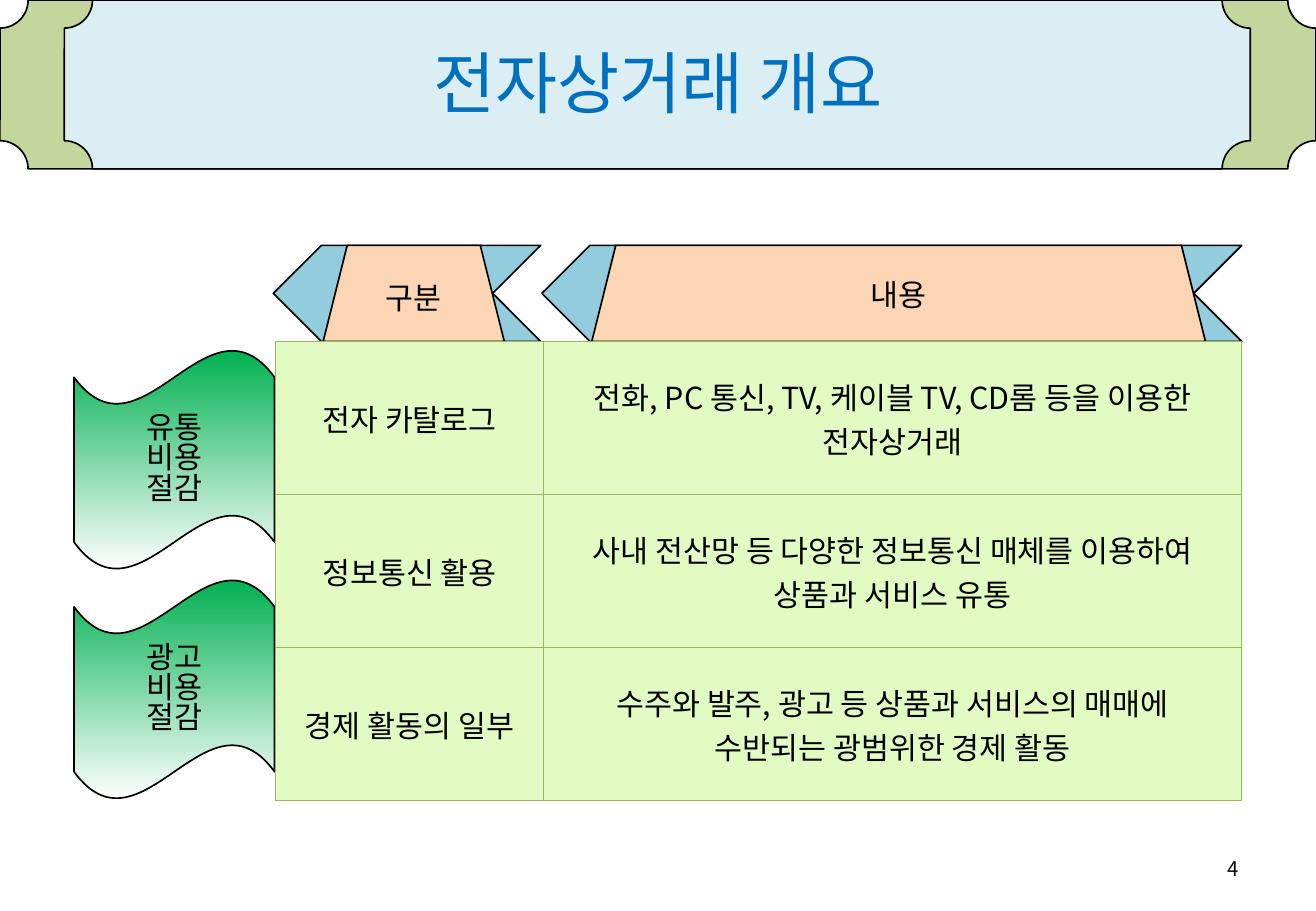
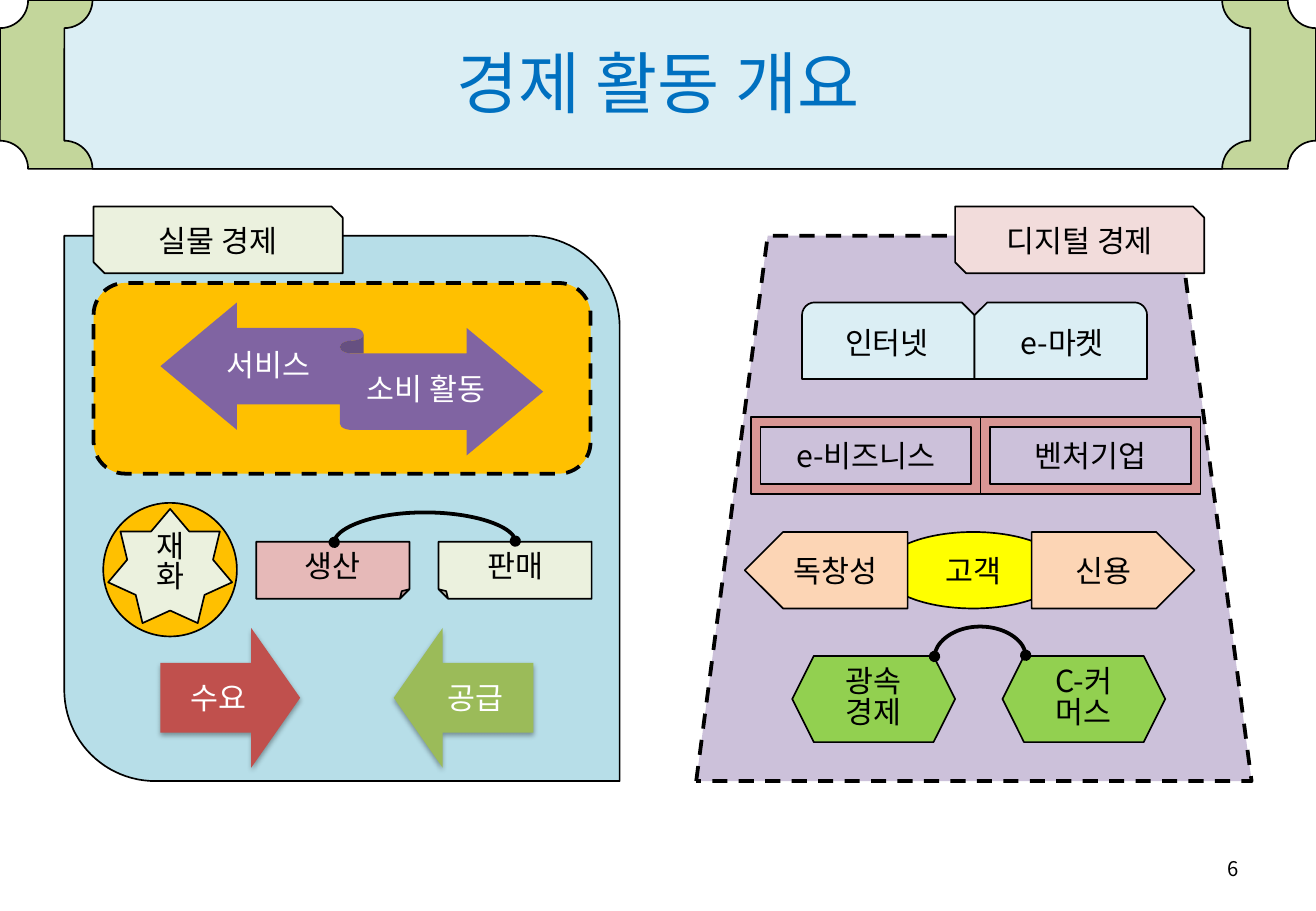
from dataclasses import dataclass

from lxml.etree import SubElement
from pptx import Presentation
from pptx.dml.color import RGBColor
from pptx.enum.dml import MSO_LINE
from pptx.enum.shapes import MSO_CONNECTOR, MSO_SHAPE
from pptx.enum.text import MSO_ANCHOR, PP_ALIGN
from pptx.oxml.ns import qn
from pptx.util import Inches, Pt


@dataclass(frozen=True)
class Theme:
    font: str = "Noto Sans CJK KR"
    title_size: int = 40
    body_size: int = 18
    number_size: int = 12
    thin: float = 1
    thick: float = 2.25
    black: str = "000000"
    white: str = "FFFFFF"
    title: str = "0070C0"
    band_ends: str = "C3D69B"
    band: str = "DBEEF4"
    ribbon: str = "93CDDD"
    peach: str = "FCD5B5"
    wave: str = "00B050"
    cell: str = "E2FBC3"
    border: str = "98B955"
    real_panel: str = "B7DEE8"
    digital_panel: str = "CCC1DA"
    ivory: str = "EBF1DE"
    blush: str = "F2DCDB"
    pink: str = "E6B9B8"
    rose: str = "D99694"
    orange: str = "FFC000"
    purple: str = "8064A2"
    red: str = "C0504D"
    olive: str = "9BBB59"
    yellow: str = "FFFF00"
    lime: str = "92D050"


T = Theme()


def rgb(value):
    return RGBColor.from_string(value)


def inches(at):
    return [Inches(v) for v in at]


# Text
def write(tf, text, size=T.body_size, color=T.black, align=PP_ALIGN.CENTER, spacing=None):
    for i, line in enumerate(text.split("\n")):
        p = tf.paragraphs[0] if i == 0 else tf.add_paragraph()
        p.text = line
        p.alignment = align
        if spacing:
            p.line_spacing = spacing
        p.font.size = Pt(size)
        p.font.name = T.font
        p.font.color.rgb = rgb(color)
        SubElement(p._p.pPr.find(qn("a:defRPr")), qn("a:ea"), typeface=T.font)


def set_insets(tf, x, y):
    tf.margin_left = tf.margin_right = Inches(x)
    tf.margin_top = tf.margin_bottom = Inches(y)


def add_text(shapes, at, text, insets=(0.1, 0.05), **style):
    tf = shapes.add_textbox(*inches(at)).text_frame
    tf.word_wrap = True
    tf.vertical_anchor = MSO_ANCHOR.MIDDLE
    set_insets(tf, *insets)
    write(tf, text, **style)


# Shapes
def add_shape(shapes, kind, at, fill, text="", line=T.thin, dash=False, flip=False, color=T.black):
    sp = shapes.add_shape(kind, *inches(at))
    sp.shadow.inherit = False
    sp.fill.solid()
    sp.fill.fore_color.rgb = rgb(fill)
    if line:
        sp.line.color.rgb = rgb(T.black)
        sp.line.width = Pt(line)
    else:
        sp.line.fill.background()
    if dash:
        sp.line.dash_style = MSO_LINE.DASH
    if flip:
        sp.element.spPr.find(qn("a:xfrm")).set("flipH", "1")
    if text:
        tf = sp.text_frame
        tf.word_wrap = False
        tf.vertical_anchor = MSO_ANCHOR.MIDDLE
        write(tf, text, color=color, spacing=0.83 if "\n" in text else None)
    return sp


def add_wave(shapes, at, text):
    sp = add_shape(shapes, MSO_SHAPE.WAVE, at, T.wave, text, flip=True)
    sp.fill.gradient()
    sp.fill.gradient_angle = 270
    for stop, position, color in zip(sp.fill.gradient_stops, (0, 1), (T.wave, T.white)):
        stop.position = position
        stop.color.rgb = rgb(color)


def add_ribbon_header(shapes, left, width, text):
    top, height = 2.02, 0.79
    add_shape(shapes, MSO_SHAPE.CHEVRON, (left, top, width, height), T.ribbon, flip=True)
    add_shape(shapes, MSO_SHAPE.TRAPEZOID, (left + 0.41, top, width - 0.71, height), T.peach, text)


def add_shadowed_arrow(shapes, kind, left, fill, text):
    sp = add_shape(shapes, kind, (left, 5.17, 1.15, 1.15), fill, text, line=0, color=T.white)
    sp.adjustments[0], sp.adjustments[1] = 0.5, 0.35
    set_insets(sp.text_frame, 0.14, 0.14)
    effects = sp.element.spPr.find(qn("a:effectLst"))
    shadow = SubElement(effects, qn("a:outerShdw"), blurRad=str(Pt(3.1)), dist=str(Pt(1.8)),
                        dir="5400000", rotWithShape="0")
    black = SubElement(shadow, qn("a:srgbClr"), val=T.black)
    SubElement(black, qn("a:alpha"), val="35000")


def add_arc(shapes, x1, x2, y):
    """Curve bulging 0.25 upwards: a vertical connector turned by 90 degrees."""
    drop, rise = 0.01, 0.25
    mid, half = (x1 + x2) / 2, (x2 - x1) / 2
    ends = (mid + drop / 2, y + half, mid - drop / 2, y - half)
    cn = shapes.add_connector(MSO_CONNECTOR.CURVE, *inches(ends))
    cn.line.color.rgb = rgb(T.black)
    cn.line.width = Pt(T.thick)
    sp_pr = cn.element.spPr
    sp_pr.find(qn("a:xfrm")).set("rot", "5400000")
    guides = sp_pr.find(qn("a:prstGeom")).find(qn("a:avLst"))
    SubElement(guides, qn("a:gd"), name="adj1", fmla=f"val {round(rise / drop * 100000)}")
    ln = sp_pr.find(qn("a:ln"))
    for tag in ("a:headEnd", "a:tailEnd"):
        SubElement(ln, qn(tag), type="oval")
    SubElement(sp_pr, qn("a:effectLst"))


# Table
def fill_cell(cell, text):
    tc_pr = cell._tc.get_or_add_tcPr()
    for side in "LRTB":
        ln = SubElement(tc_pr, qn(f"a:ln{side}"), w=str(Pt(0.75)))
        SubElement(SubElement(ln, qn("a:solidFill")), qn("a:srgbClr"), val=T.border)
    cell.fill.solid()
    cell.fill.fore_color.rgb = rgb(T.cell)
    cell.vertical_anchor = MSO_ANCHOR.MIDDLE
    write(cell.text_frame, text)


def add_grid(shapes, at, widths, rows):
    table = shapes.add_table(len(rows), len(widths), *inches(at)).table
    table.first_row = table.horz_banding = False
    for column, width in zip(table.columns, widths):
        column.width = Inches(width)
    for r, texts in enumerate(rows):
        for c, text in enumerate(texts):
            fill_cell(table.cell(r, c), text)


# Shared frame: band, title, page number
def add_slide(prs, title, number):
    shapes = prs.slides.add_slide(prs.slide_layouts[6]).shapes
    add_shape(shapes, MSO_SHAPE.PLAQUE, (0, 0, 10.83, 1.39), T.band_ends)
    add_shape(shapes, MSO_SHAPE.PLAQUE, (0.53, 0, 9.76, 1.39), T.band)
    add_text(shapes, (0.54, 0.05, 9.75, 1.25), title, size=T.title_size, color=T.title)
    add_text(shapes, (7.76, 6.95, 2.53, 0.4), number, size=T.number_size, align=PP_ALIGN.RIGHT)
    return shapes


def build_commerce(prs):
    shapes = add_slide(prs, "전자상거래 개요", "4")
    add_ribbon_header(shapes, 2.25, 2.2, "구분")
    add_ribbon_header(shapes, 4.46, 5.76, "내용")
    for i, word in enumerate(("유통", "광고")):
        add_wave(shapes, (0.61, 2.88 + 1.89 * i, 1.65, 1.81), f"{word}\n비용\n절감")
    add_grid(shapes, (2.27, 2.81, 7.95, 3.78), (2.2, 5.75), [
        ("전자 카탈로그", "전화, PC 통신, TV, 케이블 TV, CD롬 등을 이용한 전자상거래"),
        ("정보통신 활용", "사내 전산망 등 다양한 정보통신 매체를 이용하여 상품과 서비스 유통"),
        ("경제 활동의 일부", "수주와 발주, 광고 등 상품과 서비스의 매매에\n수반되는 광범위한 경제 활동"),
    ])


def add_real_economy(shapes):
    add_shape(shapes, MSO_SHAPE.ROUND_2_DIAG_RECTANGLE, (0.53, 1.94, 4.57, 4.49),
              T.real_panel, flip=True)
    add_shape(shapes, MSO_SHAPE.SNIP_2_DIAG_RECTANGLE, (0.77, 1.7, 2.05, 0.55), T.ivory, "실물 경제")
    # Service and consumption
    add_shape(shapes, MSO_SHAPE.ROUNDED_RECTANGLE, (0.77, 2.33, 4.09, 1.57), T.orange,
              line=T.thick, dash=True)
    add_shape(shapes, MSO_SHAPE.LEFT_RIGHT_RIBBON, (1.32, 2.49, 3.15, 1.26), T.purple, line=0)
    for at, text in (((1.69, 2.71, 1.04, 0.62), "서비스"), ((2.89, 2.91, 1.23, 0.62), "소비 활동")):
        add_text(shapes, at, text, insets=(0, 0.07), color=T.white, spacing=0.9)
    # Demand and supply
    add_shadowed_arrow(shapes, MSO_SHAPE.RIGHT_ARROW, 1.32, T.red, "수요")
    add_shadowed_arrow(shapes, MSO_SHAPE.LEFT_ARROW, 3.24, T.olive, "공급")
    # Goods, production and sales
    add_shape(shapes, MSO_SHAPE.OVAL, (0.85, 4.14, 1.1, 1.1), T.orange)
    add_shape(shapes, MSO_SHAPE.STAR_7_POINT, (0.89, 4.19, 1.02, 0.94), T.ivory, "재\n화")
    add_shape(shapes, MSO_SHAPE.FOLDED_CORNER, (2.11, 4.46, 1.26, 0.47), T.pink, "생산")
    add_shape(shapes, MSO_SHAPE.FOLDED_CORNER, (3.61, 4.46, 1.26, 0.47), T.ivory, "판매", flip=True)
    add_arc(shapes, 2.75, 4.24, 4.46)


def add_digital_economy(shapes):
    panel = add_shape(shapes, MSO_SHAPE.TRAPEZOID, (5.73, 1.94, 4.57, 4.49), T.digital_panel,
                      line=T.thick, dash=True)
    panel.adjustments[0] = 0.131
    add_shape(shapes, MSO_SHAPE.SNIP_2_DIAG_RECTANGLE, (7.86, 1.7, 2.05, 0.55), T.blush, "디지털 경제")
    # Three rows of equal height and pitch
    height = 0.63
    tab_top, frame_top, customer_top = (2.49 + 0.945 * i for i in range(3))
    for left, text, flip in ((6.6, "인터넷", False), (8.02, "e-마켓", True)):
        add_shape(shapes, MSO_SHAPE.SNIP_ROUND_RECTANGLE, (left, tab_top, 1.42, height),
                  T.band, text, flip=flip)
    for left, width, text in ((6.18, 1.89, "e-비즈니스"), (8.07, 1.81, "벤처기업")):
        add_shape(shapes, MSO_SHAPE.FRAME, (left, frame_top, width, height), T.rose, text)
    add_shape(shapes, MSO_SHAPE.OVAL, (7.26, customer_top, 1.5, height), T.yellow, "고객")
    for left, text, flip in ((8.49, "신용", False), (6.13, "독창성", True)):
        add_shape(shapes, MSO_SHAPE.PENTAGON, (left, customer_top, 1.34, height),
                  T.peach, text, flip=flip)
    # Linked hexagons
    for left, text in ((6.52, "광속\n경제"), (8.25, "C-커\n머스")):
        add_shape(shapes, MSO_SHAPE.HEXAGON, (left, 5.4, 1.34, 0.71), T.lime, text)
    add_arc(shapes, 7.69, 8.44, 5.4)


def build_economy(prs):
    shapes = add_slide(prs, "경제 활동 개요", "6")
    for add_panel in (add_real_economy, add_digital_economy):
        add_panel(shapes.add_group_shape().shapes)


def main():
    prs = Presentation()
    prs.slide_width, prs.slide_height = Inches(10.83), Inches(7.5)
    build_commerce(prs)
    build_economy(prs)
    prs.save("out.pptx")


if __name__ == "__main__":
    main()
